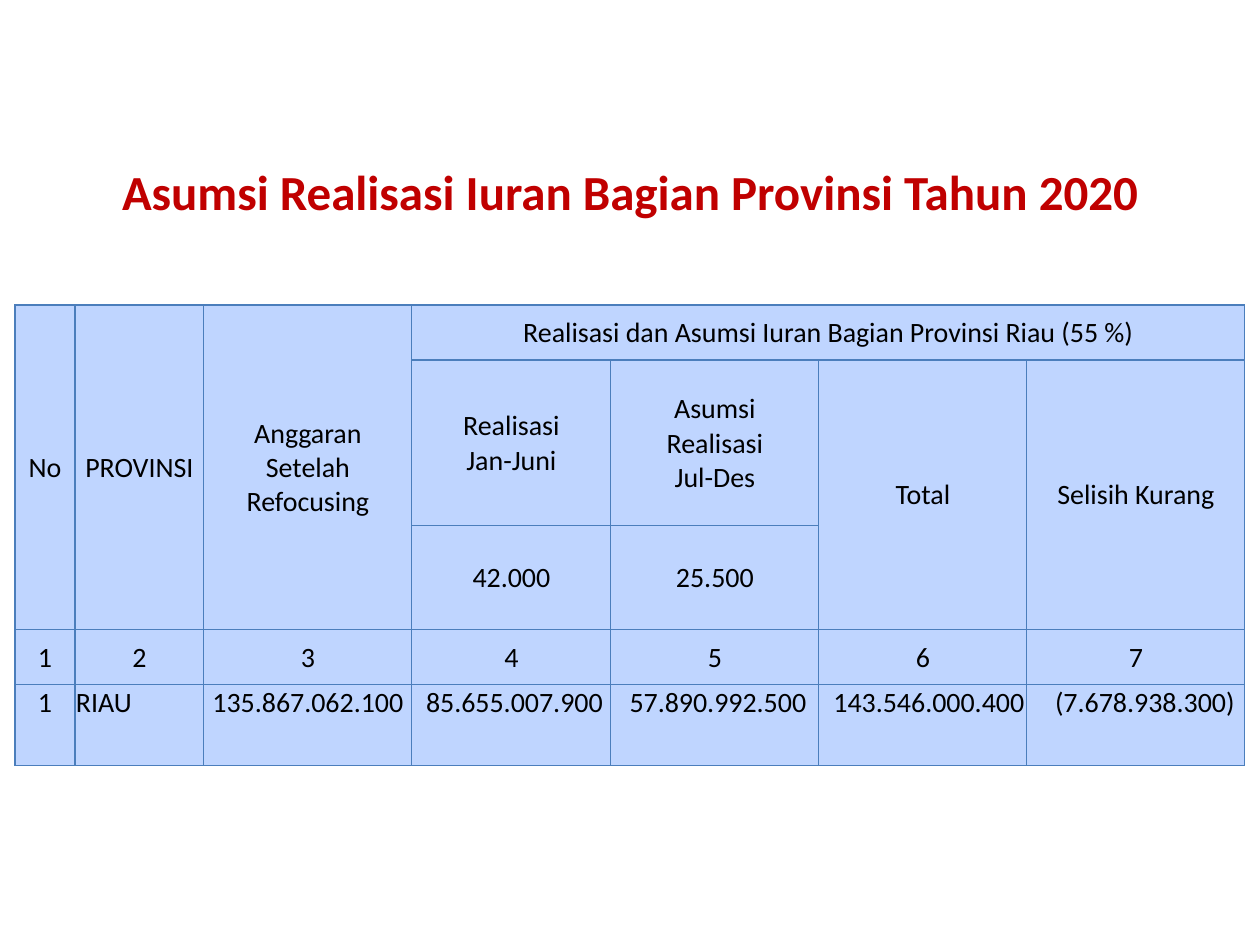
from itertools import product

from lxml.etree import SubElement
from pptx import Presentation
from pptx.dml.color import RGBColor
from pptx.enum.text import MSO_ANCHOR, PP_ALIGN
from pptx.oxml.ns import qn
from pptx.util import Pt

EMU_PER_PX = 914400 / 126
COLORS = {"title": "C00000", "text": "000000", "cell": "BFD5FF", "border": "4B7EBC"}

COLUMN_WIDTHS = [60, 129, 208, 199, 208, 208, 218]
ROW_HEIGHTS = [55, 166, 55, 55, 81]
# (row, column, rows spanned, columns spanned, lines)
HEADINGS = [
    (0, 0, 3, 1, ["No"]),
    (0, 1, 3, 1, ["PROVINSI"]),
    (0, 2, 3, 1, ["Anggaran", "Setelah Refocusing"]),
    (0, 3, 1, 4, ["Realisasi dan Asumsi Iuran Bagian Provinsi Riau (55 %)"]),
    (1, 3, 1, 1, ["Realisasi", "Jan-Juni"]),
    (1, 4, 1, 1, ["Asumsi", "Realisasi", "Jul-Des"]),
    (1, 5, 2, 1, ["Total"]),
    (1, 6, 2, 1, ["Selisih Kurang"]),
    (2, 3, 1, 1, ["42.000"]),
    (2, 4, 1, 1, ["25.500"]),
]
# (value, left indent)
RIAU_ROW = [
    ("1", 0),
    ("RIAU", 0),
    ("135.867.062.100", 0),
    ("85.655.007.900", 6),
    ("57.890.992.500", 6),
    ("143.546.000.400", 12),
    ("(7.678.938.300)", 18),
]


def px(length):
    return round(length * EMU_PER_PX)


class SlideBuilder:
    font = "Calibri"

    def __init__(self, slide):
        self.slide = slide

    def add_lines(self, frame, lines, size, color, bold=False, align=PP_ALIGN.CENTER):
        for index, line in enumerate(lines):
            paragraph = frame.add_paragraph() if index else frame.paragraphs[0]
            paragraph.alignment = align
            run = paragraph.add_run()
            run.text = line
            run.font.name = self.font
            run.font.size = Pt(size)
            run.font.bold = bold
            run.font.color.rgb = RGBColor.from_string(COLORS[color])

    def title(self, text, left, top, width, height):
        box = self.slide.shapes.add_textbox(px(left), px(top), px(width), px(height))
        box.text_frame.word_wrap = True
        self.add_lines(box.text_frame, [text], 28, "title", bold=True)

    def table(self, left, top, widths, heights):
        frame = self.slide.shapes.add_table(
            len(heights), len(widths), px(left), px(top), px(sum(widths)), px(sum(heights))
        )
        table = frame.table
        table.first_row = table.horz_banding = False
        for column, width in zip(table.columns, widths):
            column.width = px(width)
        for row, height in zip(table.rows, heights):
            row.height = px(height)
        for row, column in product(range(len(heights)), range(len(widths))):
            self.style_cell(table.cell(row, column))
        return table

    def style_cell(self, cell):
        cell.margin_left = cell.margin_right = cell.margin_top = px(1)
        cell.margin_bottom = 0
        properties = cell._tc.get_or_add_tcPr()
        for side in ("a:lnL", "a:lnR", "a:lnT", "a:lnB"):
            line = SubElement(properties, qn(side), w=str(Pt(0.75)))
            fill = SubElement(line, qn("a:solidFill"))
            SubElement(fill, qn("a:srgbClr"), val=COLORS["border"])
        cell.fill.solid()
        cell.fill.fore_color.rgb = RGBColor.from_string(COLORS["cell"])

    def fill_cell(self, cell, lines, anchor=MSO_ANCHOR.MIDDLE, align=PP_ALIGN.CENTER, indent=0):
        cell.vertical_anchor = anchor
        cell.margin_left = px(1 + indent)
        self.add_lines(cell.text_frame, lines, 16, "text", align=align)


def main():
    deck = Presentation()
    deck.slide_width, deck.slide_height = px(1260), px(945)
    builder = SlideBuilder(deck.slides.add_slide(deck.slide_layouts[6]))

    table = builder.table(15, 305, COLUMN_WIDTHS, ROW_HEIGHTS)
    for row, column, rows, columns, lines in HEADINGS:
        cell = table.cell(row, column)
        if rows * columns > 1:
            cell.merge(table.cell(row + rows - 1, column + columns - 1))
        builder.fill_cell(cell, lines)
    for column, (value, indent) in enumerate(RIAU_ROW):
        builder.fill_cell(table.cell(3, column), [str(column + 1)])
        align = PP_ALIGN.LEFT if value == "RIAU" else PP_ALIGN.CENTER
        builder.fill_cell(table.cell(4, column), [value], MSO_ANCHOR.TOP, align, indent)

    builder.title("Asumsi Realisasi Iuran Bagian Provinsi Tahun 2020", 15, 155, 1230, 89)
    deck.save("out.pptx")


if __name__ == "__main__":
    main()
